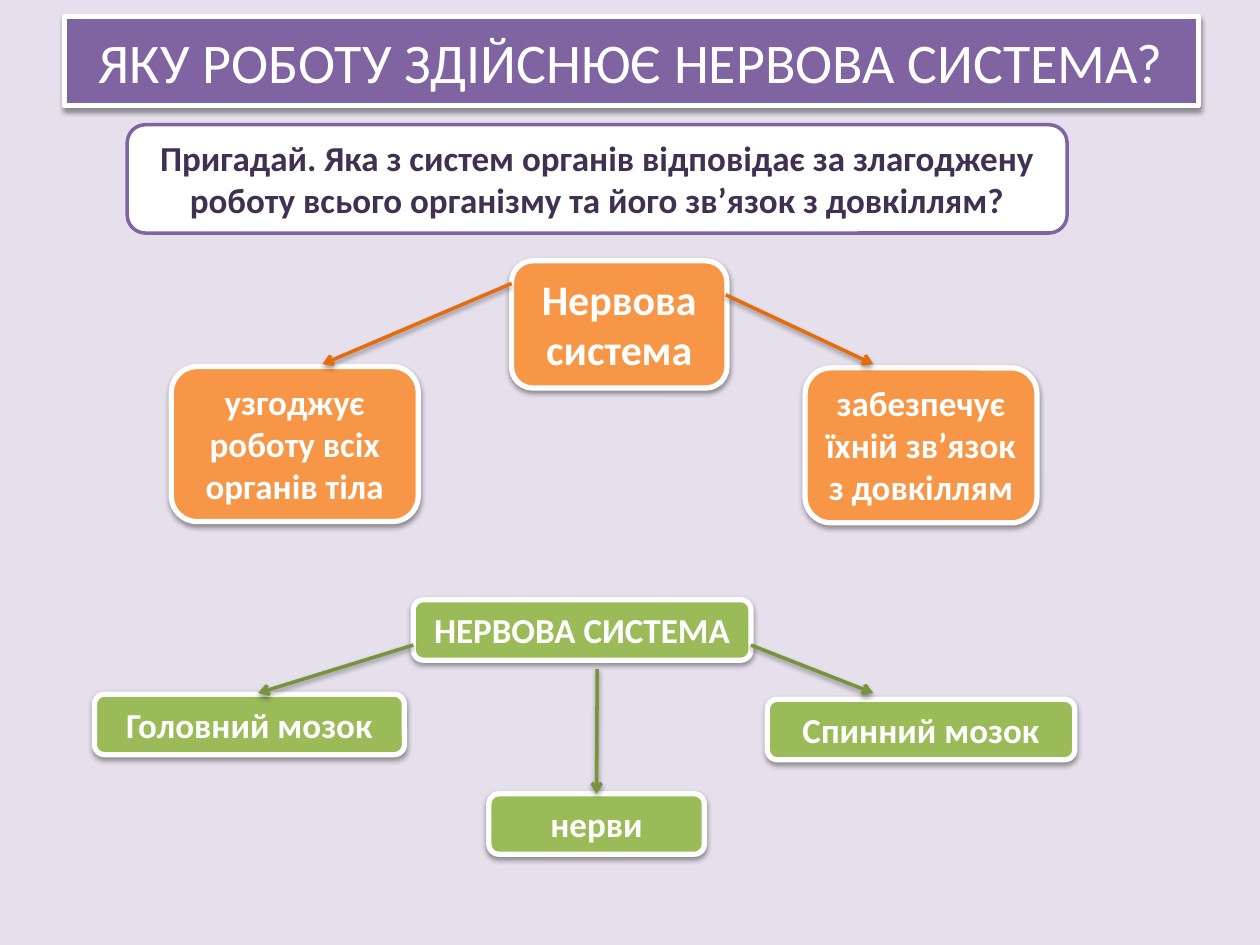
from lxml import etree
from pptx import Presentation
from pptx.dml.color import RGBColor
from pptx.enum.shapes import MSO_CONNECTOR as CONNECTOR, MSO_SHAPE as SHAPE
from pptx.enum.text import MSO_ANCHOR as ANCHOR, MSO_AUTO_SIZE as AUTO_SIZE, PP_ALIGN as ALIGN
from pptx.oxml.ns import qn
from pptx.util import Inches, Pt

WHITE = RGBColor(0xFF, 0xFF, 0xFF)
LAVENDER = RGBColor(0xE6, 0xE0, 0xEC)
PURPLE = RGBColor(0x80, 0x64, 0xA2)
DARK_PURPLE = RGBColor(0x40, 0x31, 0x52)
ORANGE = RGBColor(0xF7, 0x96, 0x46)
DARK_ORANGE = RGBColor(0xE4, 0x6C, 0x0A)
GREEN = RGBColor(0x9B, 0xBB, 0x59)
DARK_GREEN = RGBColor(0x77, 0x93, 0x3C)

TITLE = "ЯКУ РОБОТУ ЗДІЙСНЮЄ НЕРВОВА СИСТЕМА?"
TITLE_BOX = (0.51, 0.13, 9, 0.71)
QUESTION = ("Пригадай. Яка з систем органів відповідає за злагоджену "
            "роботу всього організму та його зв’язок з довкіллям?")
QUESTION_BOX = (1.01, 0.99, 7.46, 0.86)

NODES = [
    ("Нервова система", (4.06, 2.07, 1.71, 1.01), ORANGE, 24),
    ("узгоджує роботу всіх органів тіла", (1.36, 2.91, 1.96, 1.23), ORANGE, 20),
    ("забезпечує їхній зв’язок з довкіллям", (6.39, 2.92, 1.84, 1.23), ORANGE, 20),
    ("НЕРВОВА СИСТЕМА", (3.28, 4.76, 2.68, 0.48), GREEN, 20),
    ("Головний мозок", (0.75, 5.51, 2.46, 0.48), GREEN, 20),
    ("Спинний мозок", (6.09, 5.55, 2.44, 0.48), GREEN, 20),
    ("нерви", (3.88, 6.3, 1.71, 0.48), GREEN, 20),
]

ARROWS = [
    ((4.06, 2.25), (2.56, 2.89), DARK_ORANGE),
    ((5.76, 2.34), (6.93, 2.89), DARK_ORANGE),
    ((3.28, 5.12), (2.05, 5.5), DARK_GREEN),
    ((5.96, 5.12), (6.93, 5.5), DARK_GREEN),
]
NERVES_ARROW = ((4.74, 5.31), (4.74, 6.3), DARK_GREEN)


def add_shadow(shape):
    properties = shape._element.spPr
    for effects in properties.findall(qn("a:effectLst")):
        properties.remove(effects)
    effects = etree.SubElement(properties, qn("a:effectLst"))
    shadow = etree.SubElement(effects, qn("a:outerShdw"), blurRad=str(Pt(3.1)),
                              dist=str(Pt(1.6)), dir="5400000", rotWithShape="0")
    color = etree.SubElement(shadow, qn("a:srgbClr"), val="000000")
    etree.SubElement(color, qn("a:alpha"), val="38000")


def format_box(shape, text, fill, line, width, font_values):
    shape.fill.solid()
    shape.fill.fore_color.rgb = fill
    shape.line.color.rgb = line
    shape.line.width = Pt(width)
    frame = shape.text_frame
    frame.text = text
    frame.word_wrap = True
    paragraph = frame.paragraphs[0]
    paragraph.alignment = ALIGN.CENTER
    font = paragraph.runs[0].font
    font.name = "Calibri"
    font.color.rgb = font_values["color"]
    for name in ("size", "bold"):
        setattr(font, name, font_values[name])


def add_box(slide, text, box, fill, line, width, color, size):
    shape = slide.shapes.add_shape(SHAPE.ROUNDED_RECTANGLE, *map(Inches, box))
    shape.shadow.inherit = False
    format_box(shape, text, fill, line, width,
               {"color": color, "size": Pt(size), "bold": True})
    shape.text_frame.vertical_anchor = ANCHOR.TOP
    shape.text_frame.auto_size = AUTO_SIZE.SHAPE_TO_FIT_TEXT
    return shape


def add_arrow(slide, start, end, color):
    arrow = slide.shapes.add_connector(CONNECTOR.STRAIGHT, *map(Inches, start + end))
    arrow.line.color.rgb = color
    arrow.line.width = Pt(2)
    etree.SubElement(arrow.line._get_or_add_ln(), qn("a:tailEnd"), type="arrow")
    add_shadow(arrow)
    return arrow


def main():
    presentation = Presentation()
    presentation.slide_width, presentation.slide_height = Inches(10), Inches(7.5)
    slide = presentation.slides.add_slide(presentation.slide_layouts[5])
    slide.background.fill.solid()
    slide.background.fill.fore_color.rgb = LAVENDER

    title = slide.shapes.title
    title.left, title.top, title.width, title.height = map(Inches, TITLE_BOX)
    format_box(title, TITLE, PURPLE, WHITE, 3,
               {"color": WHITE, "size": Pt(32), "bold": False})
    title.text_frame.vertical_anchor = ANCHOR.MIDDLE
    title.text_frame.auto_size = AUTO_SIZE.NONE
    add_shadow(title)

    add_box(slide, QUESTION, QUESTION_BOX, WHITE, PURPLE, 2, DARK_PURPLE, 20)
    nodes = {}
    for text, box, fill, size in NODES:
        nodes[text] = add_box(slide, text, box, fill, WHITE, 3, WHITE, size)
        add_shadow(nodes[text])
    for start, end, color in ARROWS:
        add_arrow(slide, start, end, color)
    add_arrow(slide, *NERVES_ARROW).end_connect(nodes["нерви"], 0)

    presentation.save("out.pptx")


if __name__ == "__main__":
    main()
